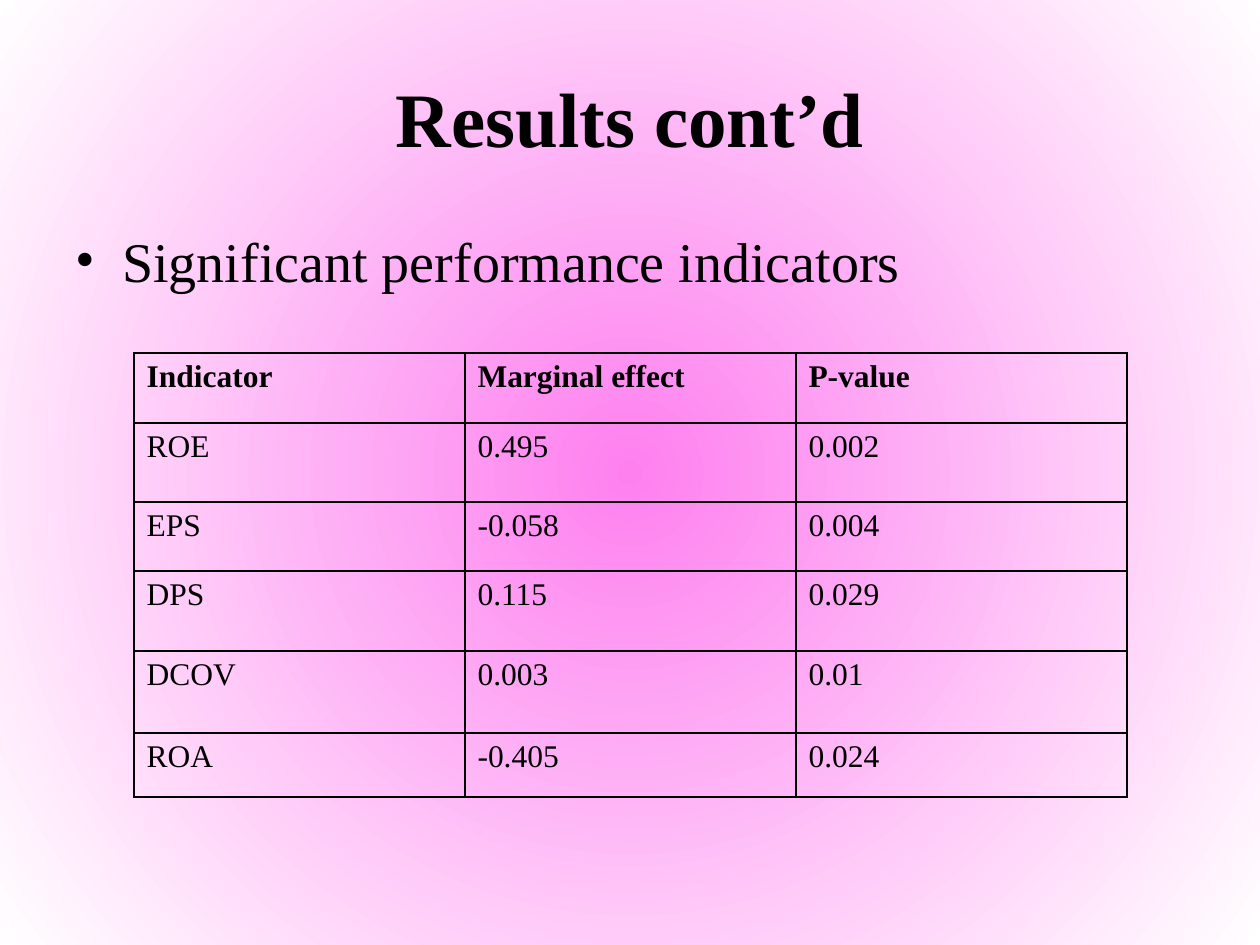
from lxml import etree
from pptx import Presentation
from pptx import util as u
from pptx.dml.color import RGBColor
from pptx.enum import text
from pptx.oxml.ns import qn

HEADING = "Results cont’d"
POINT = "Significant performance indicators"
INDICATORS = [
    ("Indicator", "Marginal effect", "P-value"),
    ("ROE", "0.495", "0.002"),
    ("EPS", "-0.058", "0.004"),
    ("DPS", "0.115", "0.029"),
    ("DCOV", "0.003", "0.01"),
    ("ROA", "-0.405", "0.024"),
]
ROW_HEIGHTS = [70, 79, 69, 80, 82, 64]
COLUMN_WIDTH = 331

BLACK = RGBColor(0x00, 0x00, 0x00)
PINK = RGBColor(0xFE, 0x80, 0xEF)
WHITE = RGBColor(0xFF, 0xFF, 0xFF)
FACE = "Times New Roman"
PX = u.Inches(1) / 126


def px(length):
    return u.Emu(round(length * PX))


def place(part, *box):
    for side, length in zip(("left", "top", "width", "height"), box):
        setattr(part, side, px(length))


def write(frame, words, size, bold=False):
    line = frame.paragraphs[0]
    run = line.add_run()
    run.text = words
    look = {"name": FACE, "size": u.Pt(size), "bold": bold}
    for attribute, value in look.items():
        setattr(run.font, attribute, value)
    run.font.color.rgb = BLACK
    return line


def add_child(parent, tag, **attributes):
    return etree.SubElement(parent, qn(tag), attributes)


def paint_background(slide):
    fill = slide.background.fill
    fill.gradient()
    for stop, colour in zip(fill.gradient_stops, (PINK, WHITE)):
        stop.color.rgb = colour
    gradient = slide.element.find(".//" + qn("a:gradFill"))
    gradient.remove(gradient.find(qn("a:lin")))
    circle = add_child(gradient, "a:path", path="circle")
    add_child(circle, "a:fillToRect", l="50000", t="50000", r="50000", b="50000")


def add_borders(cell):
    properties = cell._tc.get_or_add_tcPr()
    for edge in ("a:lnL", "a:lnR", "a:lnT", "a:lnB"):
        border = add_child(properties, edge, w=str(u.Pt(1)))
        paint = add_child(border, "a:solidFill")
        add_child(paint, "a:srgbClr", val=str(BLACK))


prs = Presentation()
prs.slide_width, prs.slide_height = px(1260), px(945)
slide = prs.slides.add_slide(prs.slide_layouts[5])
paint_background(slide)

title = slide.shapes.title
place(title, 63, 38, 1134, 157)
title.text_frame.vertical_anchor = text.MSO_ANCHOR.MIDDLE
write(title.text_frame, HEADING, 44, bold=True).alignment = text.PP_ALIGN.CENTER

body = slide.shapes.add_textbox(px(63), px(220), px(1134), px(624))
body.text_frame.word_wrap = True
point = write(body.text_frame, POINT, 32)
point.space_before = u.Pt(6)
bullet = point._p.get_or_add_pPr()
bullet.set("marL", str(px(47)))
bullet.set("indent", str(px(-47)))
add_child(bullet, "a:buFont", typeface=FACE)
add_child(bullet, "a:buChar", char="•")

columns = len(INDICATORS[0])
results = slide.shapes.add_table(
    len(INDICATORS), columns,
    px(134), px(353), px(COLUMN_WIDTH * columns), px(sum(ROW_HEIGHTS)),
).table
results.first_row = results.horz_banding = False
for column in results.columns:
    column.width = px(COLUMN_WIDTH)
for r, (values, height) in enumerate(zip(INDICATORS, ROW_HEIGHTS)):
    results.rows[r].height = px(height)
    for c, value in enumerate(values):
        cell = results.cell(r, c)
        write(cell.text_frame, value, 18, bold=r == 0)
        add_borders(cell)
        cell.fill.background()

prs.save("out.pptx")
